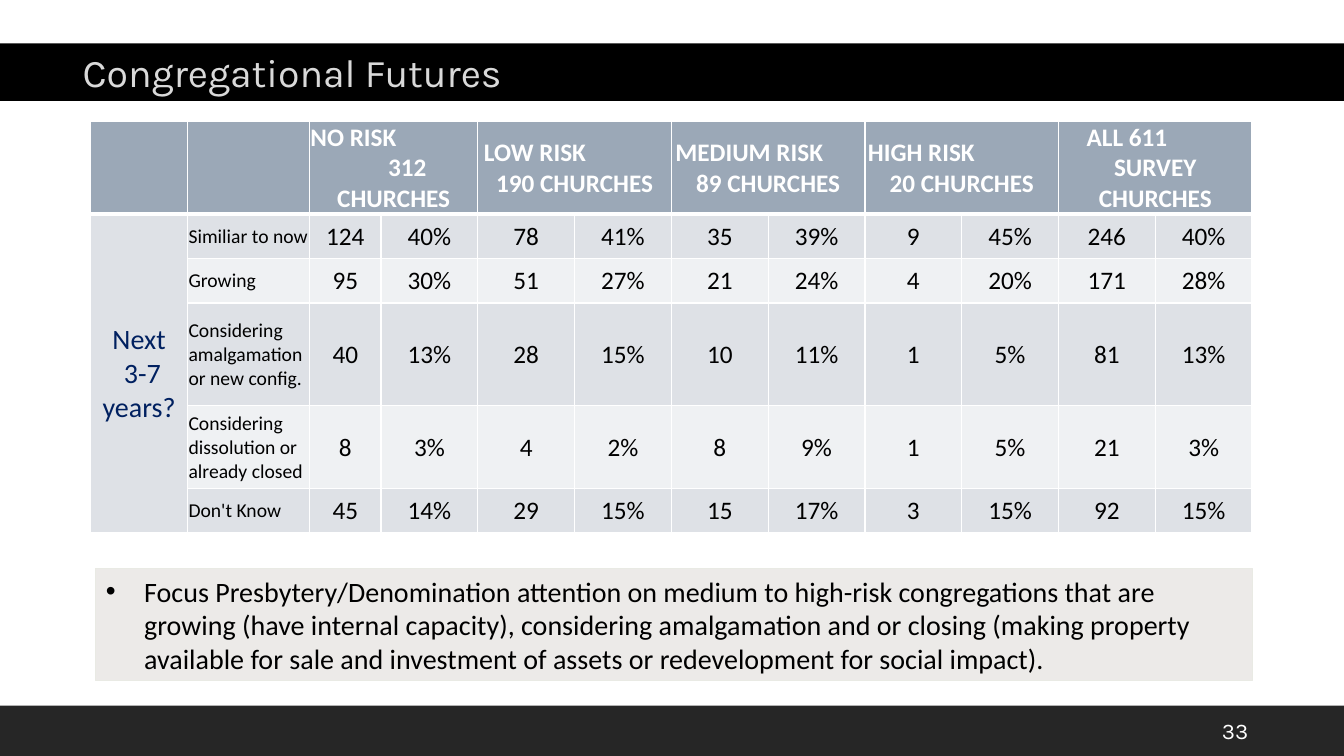
from lxml.etree import SubElement
from pptx import Presentation
from pptx.dml.color import RGBColor
from pptx.enum.shapes import MSO_SHAPE
from pptx.enum.text import MSO_ANCHOR, MSO_AUTO_SIZE, PP_ALIGN
from pptx.oxml.ns import qn
from pptx.util import Inches, Pt

COLORS = {
    "white": "FFFFFF", "black": "000000", "bar": "262626", "title": "D9D9D9",
    "head": "9BA8B7", "odd": "DEE1E6", "even": "EFF1F3", "navy": "002060",
    "note": "ECEAE8", "edge": "E9EAE4",
}
WIDTHS = [0.96, 1.21, 0.71] + [0.96] * 9
HEIGHTS = [0.91, 0.44, 0.44, 1.02, 0.82, 0.44]
# Each group: left indent of its first line, then its lines
GROUPS = [
    (0, "NO RISK", "312", "CHURCHES"),
    (0.05, "LOW RISK", "190 CHURCHES"),
    (0.03, "MEDIUM RISK", "89 CHURCHES"),
    (0.02, "HIGH RISK", "20 CHURCHES"),
    (0.27, "ALL 611", "SURVEY", "CHURCHES"),
]
ROWS = [
    ("Similiar to now", "124 40% 78 41% 35 39% 9 45% 246 40%"),
    ("Growing", "95 30% 51 27% 21 24% 4 20% 171 28%"),
    ("Considering amalgamation or new config.",
     "40 13% 28 15% 10 11% 1 5% 81 13%"),
    ("Considering dissolution or already closed",
     "8 3% 4 2% 8 9% 1 5% 21 3%"),
    ("Don't Know", "45 14% 29 15% 15 17% 3 15% 92 15%"),
]
NOTE = ("Focus Presbytery/Denomination attention on medium to high-risk "
        "congregations that are growing (have internal capacity), considering "
        "amalgamation and or closing (making property available for sale and "
        "investment of assets or redevelopment for social impact).")


def paint(part, color):
    part.solid()
    part.fore_color.rgb = RGBColor.from_string(COLORS[color])


def write(frame, text, size=18, color="black", font="Calibri", bold=False,
          align=PP_ALIGN.LEFT):
    """Fill the frame with one paragraph per line of text."""
    frame.word_wrap = True
    frame.text = text
    for par in frame.paragraphs:
        par.alignment = align
        par.space_before = Pt(0)
        face = par.runs[0].font
        face.name, face.size, face.bold = font, Pt(size), bold
        face.color.rgb = RGBColor.from_string(COLORS[color])
    return frame.paragraphs


def indent(par, left, first=0):
    props = par._p.get_or_add_pPr()
    props.set("marL", str(Inches(left)))
    props.set("indent", str(Inches(first)))
    return props


class Deck:
    """Style and current slide."""

    def __init__(self):
        self.prs = Presentation()
        self.prs.slide_width = Inches(13.33)
        self.prs.slide_height = Inches(7.5)
        self.slide = self.prs.slides.add_slide(self.prs.slide_layouts[1])

    def place(self, shape, x, y, w, h):
        shape.left, shape.top = Inches(x), Inches(y)
        shape.width, shape.height = Inches(w), Inches(h)
        shape.text_frame.auto_size = MSO_AUTO_SIZE.NONE
        shape.text_frame.vertical_anchor = MSO_ANCHOR.MIDDLE

    def bar(self, x, y, w, h, color):
        bar = self.slide.shapes.add_shape(
            MSO_SHAPE.RECTANGLE, Inches(x), Inches(y), Inches(w), Inches(h))
        bar.shadow.inherit = False
        paint(bar.fill, color)
        bar.line.fill.background()

    def title(self, text, *box):
        title = self.slide.shapes.title
        self.place(title, *box)
        paint(title.fill, "black")
        title.text_frame.margin_left = Inches(0.82)
        write(title.text_frame, text, size=28, color="title", font="Karla")

    def note(self, text, *box):
        body = self.slide.placeholders[1]
        self.place(body, *box)
        paint(body.fill, "note")
        paint(body.line.fill, "edge")
        body.line.width = Pt(0.75)
        par = write(body.text_frame, text, size=20)[0]
        props = indent(par, 0.38, -0.38)
        SubElement(props, qn("a:buFont"), typeface="Arial")
        SubElement(props, qn("a:buChar"), char="•")

    def number(self, text, *box):
        label = self.slide.shapes.add_textbox(0, 0, 0, 0)
        self.place(label, *box)
        write(label.text_frame, text, size=16, color="white", font="Karla")

    def cell(self, cell, fill, base=1):
        """Set borders, fill and margins; base is the bottom border in points."""
        props = cell._tc.get_or_add_tcPr()
        for side, width in zip("LRTB", (1, 1, 1, base)):
            line = SubElement(props, qn(f"a:ln{side}"), w=str(Pt(width)))
            solid = SubElement(line, qn("a:solidFill"))
            SubElement(solid, qn("a:srgbClr"), val=COLORS["white"])
        paint(cell.fill, fill)
        cell.vertical_anchor = MSO_ANCHOR.MIDDLE
        cell.margin_left = cell.margin_right = cell.margin_top = Inches(0.01)
        cell.margin_bottom = 0

    def table(self, x, y):
        grid = self.slide.shapes.add_table(
            len(HEIGHTS), len(WIDTHS), Inches(x), Inches(y),
            Inches(sum(WIDTHS)), Inches(sum(HEIGHTS))).table
        for col, width in zip(grid.columns, WIDTHS):
            col.width = Inches(width)
        for r, height in enumerate(HEIGHTS):
            grid.rows[r].height = Inches(height)
            fill = "head" if r == 0 else "odd" if r % 2 else "even"
            for cell in grid.rows[r].cells:
                self.cell(cell, fill, base=1 if r else 3)

        for i, (left, *lines) in enumerate(GROUPS):
            head = grid.cell(0, 2 + 2 * i)
            head.merge(grid.cell(0, 3 + 2 * i))
            pars = write(head.text_frame, "\n".join(lines), color="white",
                         bold=True, align=PP_ALIGN.CENTER)
            pars[0].alignment = PP_ALIGN.LEFT
            indent(pars[0], left)
            if lines[1] == "312":
                indent(pars[1], 0.27)

        side = grid.cell(1, 0)
        side.merge(grid.cell(len(ROWS), 0))
        write(side.text_frame, "Next\n 3-7 years?", size=20, color="navy",
              align=PP_ALIGN.CENTER)
        for r, (label, values) in enumerate(ROWS, 1):
            write(grid.cell(r, 1).text_frame, label, size=14)
            for c, value in enumerate(values.split(), 2):
                write(grid.cell(r, c).text_frame, value, align=PP_ALIGN.CENTER)


def main():
    deck = Deck()
    deck.bar(0, 7, 13.33, 0.5, "bar")
    deck.title("Congregational Futures", 0, 0.43, 13.33, 0.57)
    deck.number("33", 12.02, 7.05, 0.85, 0.4)
    deck.table(0.9, 1.2)
    deck.note(NOTE, 0.95, 5.64, 11.47, 1.11)
    deck.prs.save("out.pptx")


if __name__ == "__main__":
    main()
